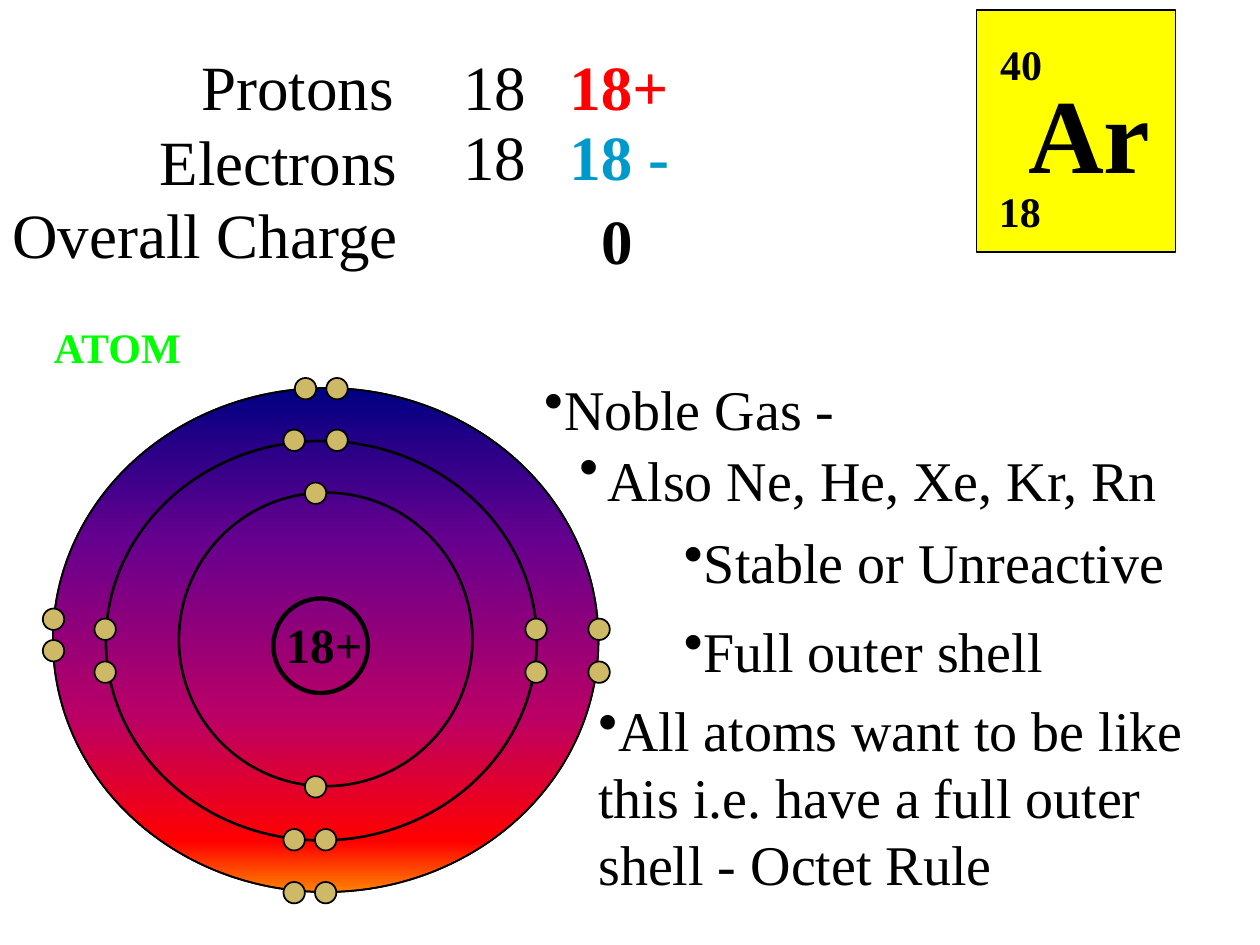
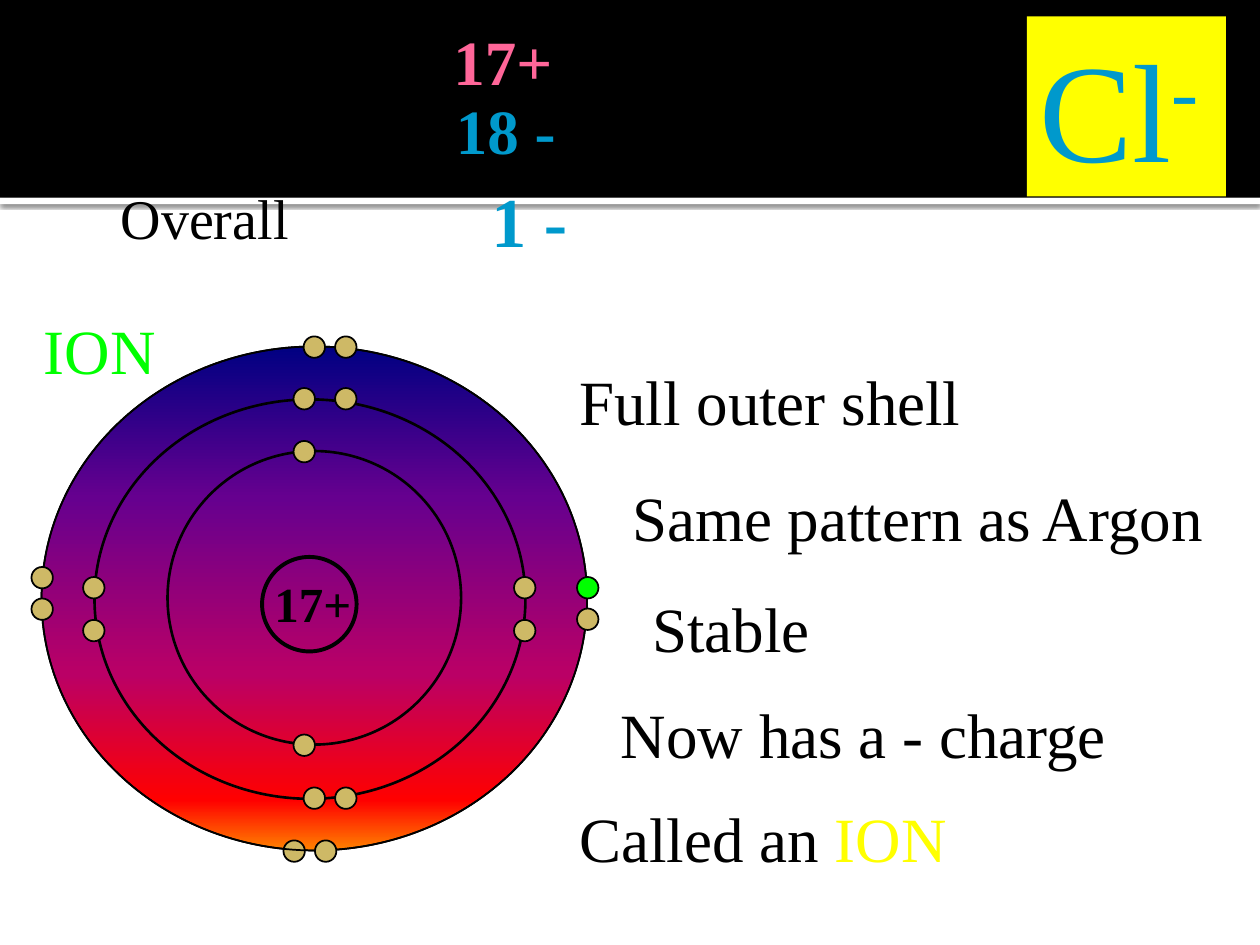
from lxml import etree
from pptx import Presentation
from pptx.dml.color import RGBColor
from pptx.enum.shapes import MSO_SHAPE
from pptx.enum.text import MSO_ANCHOR, PP_ALIGN
from pptx.oxml.ns import qn
from pptx.util import Inches, Pt

OVAL, RECT = MSO_SHAPE.OVAL, MSO_SHAPE.RECTANGLE
TOP, MIDDLE = MSO_ANCHOR.TOP, MSO_ANCHOR.MIDDLE
LEFT, CENTER = PP_ALIGN.LEFT, PP_ALIGN.CENTER
BLANK = 6

COLORS = {
    "black": "000000", "white": "FFFFFF", "yellow": "FFFF00", "green": "00FF00",
    "red": "FF0000", "pink": "FF6699", "blue": "0099CC", "gold": "CEB966",
}
GLOW = [(0, "000082"), (30, "66008F"), (65, "BA0066"), (90, "FF0000"), (100, "FF8200")]
FONT = "Times New Roman"

# Electron places, measured from the corner of the outer shell
SHARED = [(2, 0.75), (2, 3.08), (0.33, 1.83), (0.33, 2.17),
          (3.75, 1.83), (3.75, 2.17), (-0.08, 1.75), (-0.08, 2)]


def rgb(name):
    return RGBColor.from_string(COLORS[name])


class Deck:
    def __init__(self):
        self.prs = Presentation()
        self.prs.slide_width, self.prs.slide_height = Inches(10), Inches(7.5)
        self.shapes = None

    def slide(self):
        layout = self.prs.slide_layouts[BLANK]
        self.shapes = self.prs.slides.add_slide(layout).shapes

    def style(self, par, size, color, bold=False):
        font = par.font
        font.name, font.size, font.bold = FONT, Pt(size), bold
        font.color.rgb = rgb(color)

    def bullet(self, par, margin=0, indent=0):
        props = par._p.get_or_add_pPr()
        props.set("marL", str(Inches(margin)))
        props.set("indent", str(Inches(indent)))
        etree.SubElement(props, qn("a:buChar")).set("char", "•")

    def text(self, words, x, y, w, h, size=36, color="black", bold=False,
             gap=0.0, wrap=True, dot=False):
        box = self.shapes.add_textbox(Inches(x), Inches(y), Inches(w), Inches(h))
        frame = box.text_frame
        frame.word_wrap = wrap
        frame.margin_left = Inches(0.1 + gap)
        par = frame.paragraphs[0]
        par.text = words
        if dot:
            self.bullet(par)
        self.style(par, size, color, bold)
        return frame

    def shape(self, kind, x, y, w, h, fill=None, line="black", width=1.0):
        item = self.shapes.add_shape(kind, Inches(x), Inches(y), Inches(w), Inches(h))
        item.shadow.inherit = False
        if fill:
            item.fill.solid()
            item.fill.fore_color.rgb = rgb(fill)
        else:
            item.fill.background()
        if line:
            item.line.color.rgb = rgb(line)
            item.line.width = Pt(width)
        else:
            item.line.fill.background()
        return item

    def glow(self, item):
        item.fill.gradient()
        item.fill.gradient_angle = 270
        stops = item._element.spPr.find(qn("a:gradFill")).find(qn("a:gsLst"))
        for old in list(stops):
            stops.remove(old)
        for pos, color in GLOW:
            stop = etree.SubElement(stops, qn("a:gs"), pos=str(pos * 1000))
            etree.SubElement(stop, qn("a:srgbClr"), val=color)

    def shade(self, item):
        effects = item._element.spPr.find(qn("a:effectLst"))
        shadow = etree.SubElement(effects, qn("a:outerShdw"), blurRad=str(Pt(2.5)),
                                  dist=str(Pt(0.8)), dir="5400000", rotWithShape="0")
        tint = etree.SubElement(shadow, qn("a:srgbClr"), val=COLORS["black"])
        etree.SubElement(tint, qn("a:alpha"), val="60000")

    def dots(self, x, y, spots, color="gold"):
        for dx, dy in spots:
            self.shape(OVAL, x + dx, y + dy, 0.17, 0.17, color)

    def atom(self, x, y, label, core, spots, under=()):
        self.glow(self.shape(OVAL, x, y, 4.33, 4))
        self.dots(x, y, under)
        self.shape(OVAL, x, y, 4.33, 4)
        self.shape(OVAL, x + 1.75, y + 1.67, 0.75, 0.75, width=core)
        self.shape(OVAL, x + 1, y + 0.83, 2.33, 2.33, width=1.5)
        self.shape(OVAL, x + 0.42, y + 0.42, 3.42, 3.17, width=1.5)
        self.dots(x, y, SHARED + spots)
        self.text(label, x + 1.75, y + 1.75, 0.83, 0.57, 28, bold=True)

    def tile(self, x, y, h, line=None):
        item = self.shape(RECT, x, y, 1.58, h, "yellow", line)
        return item, item.text_frame


def argon(deck):
    deck.slide()

    # Particle counts
    deck.text("Protons", 1.5, 0.33, 1.83, 0.7)
    deck.text("Electrons", 1.17, 0.92, 2.25, 0.7)
    deck.text("Overall Charge", 0, 1.5, 3.42, 0.7)
    for y, charge, color in [(0.33, "18+", "red"), (0.88, "18 -", "blue")]:
        deck.text("18", 3.58, y, 0.75, 0.7)
        deck.text(charge, 4.42, y, 1.08, 0.7, color=color, bold=True)
    deck.text("0", 4.42, 1.55, 0.75, 0.7, bold=True, gap=0.25)

    # Atom
    deck.text("ATOM", 0.33, 2.5, 1.33, 0.5, 24, "green", True)
    deck.atom(0.42, 3.08, "18+", 2.5, [
        (1.83, 0.33), (2.17, 0.33), (1.83, 3.5), (2.08, 3.5),
        (1.92, -0.08), (2.17, -0.08), (1.83, 3.92), (2.08, 3.92),
        (4.25, 1.83), (4.25, 2.17)])

    # Facts
    frame = deck.text("Noble Gas -", 4.22, 2.92, 5.78, 1.18, 32, dot=True)
    more = frame.add_paragraph()
    more.text = "Also Ne, He, Xe, Kr, Rn"
    more.level = 1
    more.line_spacing = 0.5
    more.space_before = Pt(19)
    deck.bullet(more, 0.5, -0.22)
    deck.style(more, 32, "black")
    for words, x, y, w, h in [
            ("Stable or Unreactive", 5.33, 4.14, 4.25, 0.63),
            ("Full outer shell", 5.33, 4.84, 3.67, 0.63),
            ("All atoms want to be like this i.e. have a full outer shell - Octet Rule",
             4.65, 5.47, 5.35, 1.72)]:
        deck.text(words, x, y, w, h, 32, dot=True)

    # Element tile
    deck.shapes = deck.shapes.add_group_shape().shapes
    _, frame = deck.tile(7.75, 0.08, 1.92, "black")
    frame.word_wrap = False
    frame.vertical_anchor = MIDDLE
    frame.margin_left = Inches(0.31)
    par = frame.paragraphs[0]
    par.text = "Ar"
    par.alignment = CENTER
    deck.style(par, 60, "black", True)
    deck.text("40", 7.84, 0.26, 0.66, 0.5, 24, bold=True)
    deck.text("18", 7.83, 1.42, 0.74, 0.5, 24, bold=True)


def chloride(deck):
    deck.slide()

    # Title band
    deck.shade(deck.shape(RECT, 0, 1.57, 10, 0.05, "white", None))
    deck.shape(RECT, 0, 0, 10, 1.57, "black", None)

    # Ion
    deck.atom(0.33, 2.75, "17+", 2.25, [
        (2, 0.33), (2.33, 0.33), (2.08, 3.5), (2.33, 3.5),
        (2.08, -0.08), (2.33, -0.08), (2.17, 3.92), (4.25, 2.08)],
        under=[(1.92, 3.92)])
    deck.dots(0.33, 2.75, [(4.25, 1.83)], "green")
    deck.text("ION", 0.25, 2.42, 1.42, 0.7, color="green")

    # Charges
    deck.text("17+", 3.5, 0.13, 1.08, 0.7, color="pink", bold=True)
    deck.text("18 -", 3.52, 0.68, 1.08, 0.7, color="blue", bold=True)
    deck.text("Overall", 0.86, 1.41, 2, 0.63, 32)
    deck.text("1 -", 3.52, 1.36, 1.08, 0.77, 40, "blue", True, gap=0.28, wrap=False)

    # Facts
    for words, x, y, w in [
            ("Full outer shell", 4.5, 2.83, 3.23),
            ("Same pattern as Argon", 4.92, 3.75, 4.77),
            ("Stable", 5.08, 4.63, 1.45),
            ("Now has a - charge", 4.83, 5.47, 4.06)]:
        deck.text(words, x, y, w, 0.7, wrap=False)
    frame = deck.text("Called an ", 4.5, 6.3, 3.12, 0.7, wrap=False)
    run = frame.paragraphs[0].add_run()
    run.text = "ION"
    run.font.color.rgb = rgb("yellow")

    # Element tile
    _, frame = deck.tile(8.15, 0.13, 1.43)
    frame.vertical_anchor = TOP
    par = frame.paragraphs[0]
    par.text = "Cl"
    par.alignment = LEFT
    deck.style(par, 80, "blue")
    sign = par.add_run()
    sign.text = "-"
    sign.font._element.set("baseline", "30000")


def main():
    deck = Deck()
    argon(deck)
    chloride(deck)
    deck.prs.save("out.pptx")


if __name__ == "__main__":
    main()
